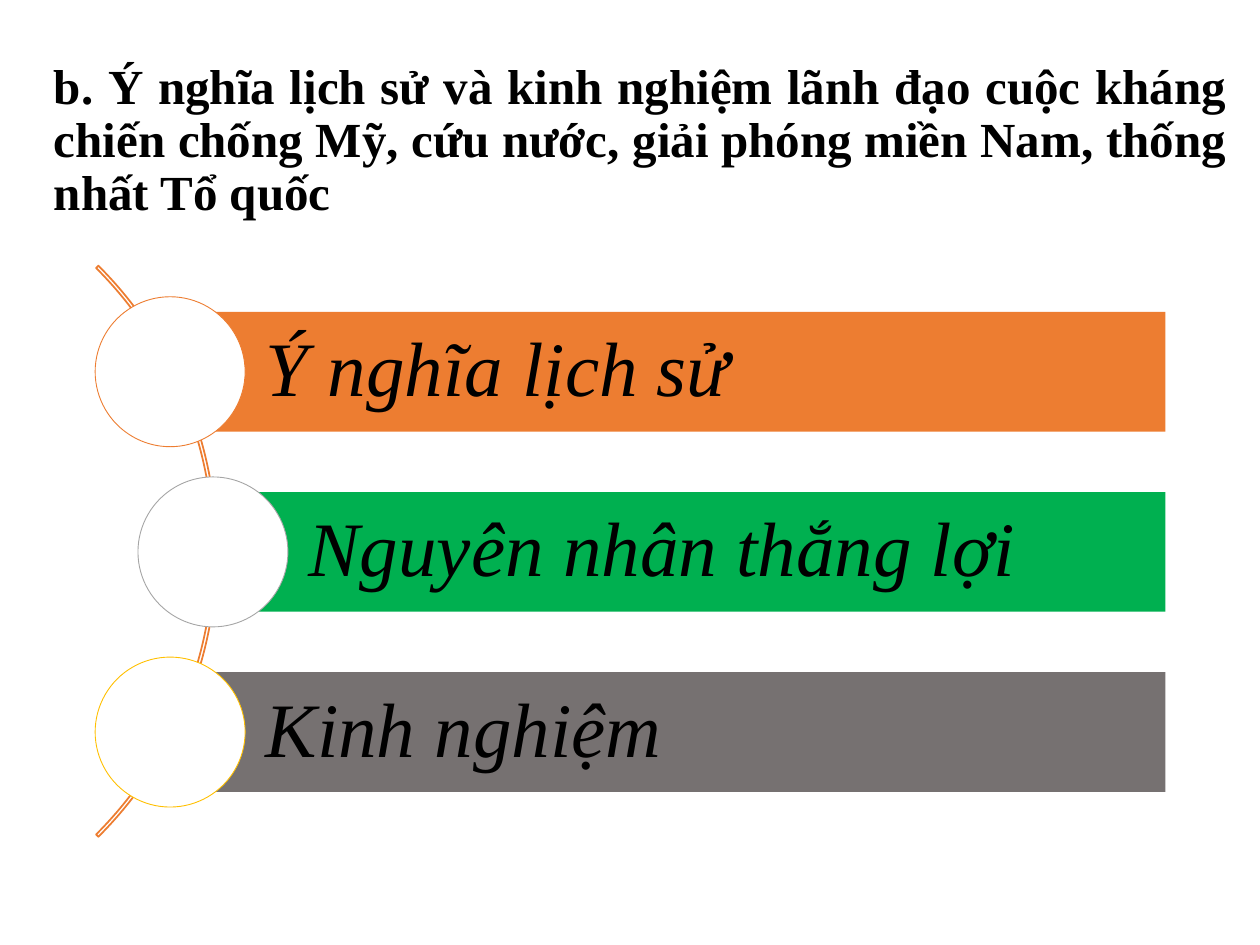
from dataclasses import dataclass

from pptx import Presentation
from pptx.dml.color import RGBColor
from pptx.enum.shapes import MSO_SHAPE
from pptx.enum.text import MSO_ANCHOR, PP_ALIGN
from pptx.util import Inches, Pt

RECTANGLE, OVAL, BLOCK_ARC = MSO_SHAPE.RECTANGLE, MSO_SHAPE.OVAL, MSO_SHAPE.BLOCK_ARC
MIDDLE = MSO_ANCHOR.MIDDLE
LEFT, JUSTIFY = PP_ALIGN.LEFT, PP_ALIGN.JUSTIFY

FONT = "Times New Roman"
COLORS = {
    "text": "000000",
    "white": "FFFFFF",
    "orange": "ED7D31",
    "green": "00B050",
    "brown_gray": "767171",
    "light_gray": "A5A5A5",
    "gold": "FFC000",
}

BAR_RIGHT = 9.25
BAR_HEIGHT = 0.95
CIRCLE_SIZE = 1.19
FIRST_CENTER_Y = 2.95
ROW_PITCH = 1.43


@dataclass(frozen=True)
class Topic:
    label: str
    center_x: float
    bar_color: str
    ring_color: str


TOPICS = [
    Topic("Ý nghĩa lịch sử", 1.35, "orange", "orange"),
    Topic("Nguyên nhân thắng lợi", 1.69, "green", "light_gray"),
    Topic("Kinh nghiệm", 1.35, "brown_gray", "gold"),
]


def rgb(name: str) -> RGBColor:
    return RGBColor.from_string(COLORS[name])


def add_figure(slide, preset, left: float, top: float, width: float, height: float,
               fill: str | None = None, line: str | None = None, line_width: float = 0.5):
    """Add a shadowless preset shape; a missing fill or line is left undrawn."""
    figure = slide.shapes.add_shape(
        preset, Inches(left), Inches(top), Inches(width), Inches(height))
    figure.shadow.inherit = False
    if fill:
        figure.fill.solid()
        figure.fill.fore_color.rgb = rgb(fill)
    else:
        figure.fill.background()
    if line:
        figure.line.color.rgb = rgb(line)
        figure.line.width = Pt(line_width)
    else:
        figure.line.fill.background()
    return figure


def write_text(frame, text: str, size: int, align, bold: bool = False, italic: bool = False) -> None:
    frame.word_wrap = True
    frame.vertical_anchor = MIDDLE
    frame.text = text
    paragraph = frame.paragraphs[0]
    paragraph.alignment = align
    paragraph.line_spacing = 0.9
    font = paragraph.runs[0].font
    font.name, font.size = FONT, Pt(size)
    font.bold, font.italic = bold, italic
    font.color.rgb = rgb("text")


def add_title(slide) -> None:
    title = slide.shapes.add_textbox(Inches(0.33), Inches(0.4), Inches(9.5), Inches(1.45))
    write_text(
        title.text_frame,
        "b. Ý nghĩa lịch sử và kinh nghiệm lãnh đạo cuộc kháng chiến chống Mỹ, "
        "cứu nước, giải phóng miền Nam, thống nhất Tổ quốc",
        28, JUSTIFY, bold=True)


def add_arc(slide) -> None:
    """Draw the thin arc from 315 to 45 degrees that links the circles."""
    arc = add_figure(slide, BLOCK_ARC, -4.69, 1.17, 6.41, 6.41, line="orange", line_width=1)
    # Angles count in 60000ths of a degree, adjustments in 100000ths.
    arc.adjustments[0] = 315 * 0.6
    arc.adjustments[1] = 45 * 0.6
    arc.adjustments[2] = 0.004


def add_topic(slide, topic: Topic, center_y: float) -> None:
    bar = add_figure(slide, RECTANGLE, topic.center_x, center_y - BAR_HEIGHT / 2,
                     BAR_RIGHT - topic.center_x, BAR_HEIGHT, fill=topic.bar_color)
    frame = bar.text_frame
    frame.margin_left = Inches(0.76)
    frame.margin_top = frame.margin_right = frame.margin_bottom = Inches(0.12)
    write_text(frame, topic.label, 44, LEFT, italic=True)
    add_figure(slide, OVAL, topic.center_x - CIRCLE_SIZE / 2, center_y - CIRCLE_SIZE / 2,
               CIRCLE_SIZE, CIRCLE_SIZE, fill="white", line=topic.ring_color)


def main() -> None:
    presentation = Presentation()
    presentation.slide_width, presentation.slide_height = Inches(10), Inches(7.5)
    slide = presentation.slides.add_slide(presentation.slide_layouts[6])
    add_title(slide)
    add_arc(slide)
    for row, topic in enumerate(TOPICS):
        add_topic(slide, topic, FIRST_CENTER_Y + row * ROW_PITCH)
    presentation.save("out.pptx")


if __name__ == "__main__":
    main()
